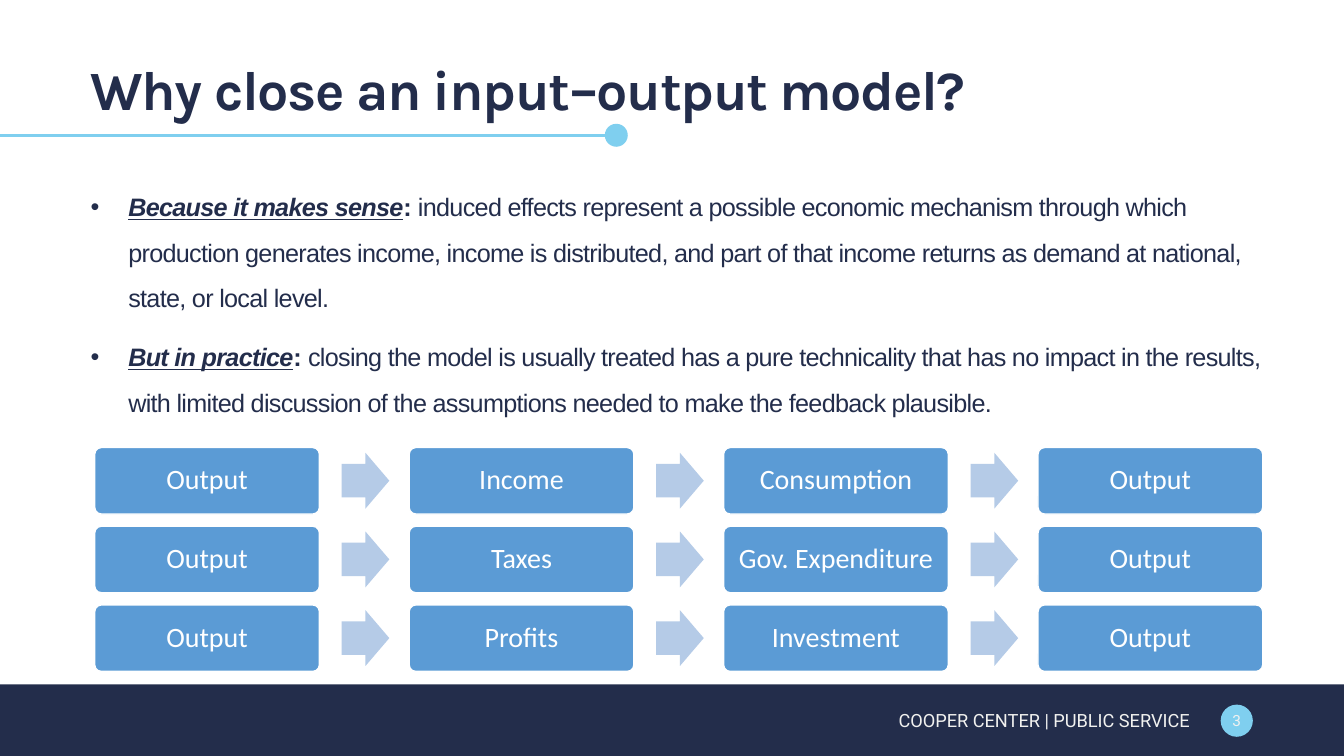
from lxml.etree import SubElement
from pptx import Presentation
from pptx.dml.color import RGBColor
from pptx.enum.shapes import MSO_CONNECTOR, MSO_SHAPE
from pptx.enum.text import MSO_ANCHOR, MSO_AUTO_SIZE, PP_ALIGN
from pptx.oxml.ns import qn
from pptx.util import Pt

NAVY, SKY, BLUE, PALE = "232D4B", "7FCFEF", "5B9BD5", "B5CBE7"
WHITE, CREAM = "FFFFFF", "F1F1EF"

POINTS = [
    ("Because it makes sense",
     "induced effects represent a possible economic mechanism through which "
     "production generates income, income is distributed, and part of that "
     "income returns as demand at national, state, or local level."),
    ("But in practice",
     "closing the model is usually treated has a pure technicality that has "
     "no impact in the results, with limited discussion of the assumptions "
     "needed to make the feedback plausible."),
]
CHAINS = [
    ("Output", "Income", "Consumption", "Output"),
    ("Output", "Taxes", "Gov. Expenditure", "Output"),
    ("Output", "Profits", "Investment", "Output"),
]


def color(code):
    return RGBColor.from_string(code)


def add_run(para, text, font, size, code, bold=False, accent=False, gap=0):
    """Add one run; accent is italic and underlined, gap is letter spacing."""
    run = para.add_run()
    run.text = text
    face = run.font
    face.name, face.size, face.bold = font, Pt(size), bold
    face.italic = face.underline = accent
    face.color.rgb = color(code)
    if gap:
        run._r.get_or_add_rPr().set("spc", str(int(gap * 100)))


def set_frame(frame, anchor, insets):
    frame.word_wrap = True
    frame.auto_size = MSO_AUTO_SIZE.NONE
    frame.vertical_anchor = anchor
    left, top, right, bottom = map(Pt, insets)
    frame.margin_left, frame.margin_top = left, top
    frame.margin_right, frame.margin_bottom = right, bottom


def add_form(slide, kind, box, fill, edge=None):
    form = slide.shapes.add_shape(kind, *map(Pt, box))
    form.shadow.inherit = False
    form.fill.solid()
    form.fill.fore_color.rgb = color(fill)
    if edge:
        form.line.color.rgb = color(edge)
        form.line.width = Pt(1)
    else:
        form.line.fill.background()
    return form


def add_label(form, text, font, size, code, inset):
    set_frame(form.text_frame, MSO_ANCHOR.MIDDLE, [inset] * 4)
    para = form.text_frame.paragraphs[0]
    para.alignment = PP_ALIGN.CENTER
    add_run(para, text, font, size, code)
    return para


def add_title(slide, text):
    title = slide.shapes.title
    title.left, title.top = Pt(57.6), Pt(43.2)
    title.width, title.height = Pt(842.4), Pt(43.2)
    set_frame(title.text_frame, MSO_ANCHOR.BOTTOM, (7.2, 3.6, 7.2, 0))
    para = title.text_frame.paragraphs[0]
    para.alignment = PP_ALIGN.LEFT
    para.line_spacing = 0.8
    add_run(para, text, "Karla", 39.6, NAVY, bold=True, gap=-1)


def add_rule(slide):
    """Line from the slide's left edge to a dot under the title."""
    line = slide.shapes.add_connector(
        MSO_CONNECTOR.STRAIGHT, Pt(0), Pt(96.6), Pt(432), Pt(96.6))
    line.line.color.rgb = color(SKY)
    line.line.width = Pt(2.25)
    SubElement(line._element.spPr, qn("a:effectLst"))
    add_form(slide, MSO_SHAPE.OVAL, (432, 88.4, 16.4, 16.4), SKY)


def add_points(slide, points):
    box = slide.shapes.add_textbox(Pt(57.6), Pt(122.4), Pt(876.2), Pt(190))
    frame = box.text_frame
    set_frame(frame, MSO_ANCHOR.TOP, (7.2, 3.6, 7.2, 3.6))
    for i, (lead, text) in enumerate(points):
        para = frame.add_paragraph() if i else frame.paragraphs[0]
        props = para._p.get_or_add_pPr()
        props.set("marL", str(Pt(27)))
        props.set("indent", str(Pt(-27)))
        SubElement(props, qn("a:buFont")).set("typeface", "Arial")
        SubElement(props, qn("a:buChar")).set("char", "•")
        para.line_spacing = 1.5
        if i:
            para.space_before = Pt(10)
        style = ("Arial", 18, NAVY)
        add_run(para, lead, *style, bold=True, accent=True, gap=-0.5)
        add_run(para, ": ", *style, bold=True, gap=-0.5)
        add_run(para, text, *style, gap=-0.5)


def add_chains(slide, chains):
    """Rows of boxes, with an arrow after each box but the last."""
    for row, chain in enumerate(chains):
        top = 319.7 + row * 56.2
        for col, name in enumerate(chain):
            left = 67.7 + col * 224.6
            box = add_form(slide, MSO_SHAPE.ROUNDED_RECTANGLE,
                           (left, top, 160.5, 47.5), BLUE, WHITE)
            box.adjustments[0] = 0.1
            para = add_label(box, name, "Calibri", 20, WHITE, 6)
            para.line_spacing = 0.9
            if col < len(chain) - 1:
                arrow = add_form(slide, MSO_SHAPE.RIGHT_ARROW,
                                 (left + 176.4, top + 3.8, 34, 39.8), PALE)
                arrow.adjustments[0] = 0.6
                arrow.adjustments[1] = 0.5


def add_footer(slide, text, number):
    add_form(slide, MSO_SHAPE.RECTANGLE, (0, 488.9, 960, 51.1), NAVY)
    box = slide.shapes.add_textbox(Pt(621.4), Pt(500.4), Pt(235.4), Pt(28.8))
    set_frame(box.text_frame, MSO_ANCHOR.MIDDLE, (7.2, 3.6, 7.2, 3.6))
    para = box.text_frame.paragraphs[0]
    para.alignment = PP_ALIGN.RIGHT
    add_run(para, text, "Roboto", 13, CREAM)
    dot = add_form(slide, MSO_SHAPE.OVAL, (871.9, 503.3, 23, 23), SKY)
    add_label(dot, number, "Roboto", 11, CREAM, 0)


def main():
    deck = Presentation()
    deck.slide_width, deck.slide_height = Pt(960), Pt(540)
    slide = deck.slides.add_slide(deck.slide_layouts[5])
    add_title(slide, "Why close an input–output model?")
    add_rule(slide)
    add_points(slide, POINTS)
    add_chains(slide, CHAINS)
    add_footer(slide, "COOPER CENTER | PUBLIC SERVICE", "3")
    deck.save("out.pptx")


if __name__ == "__main__":
    main()
